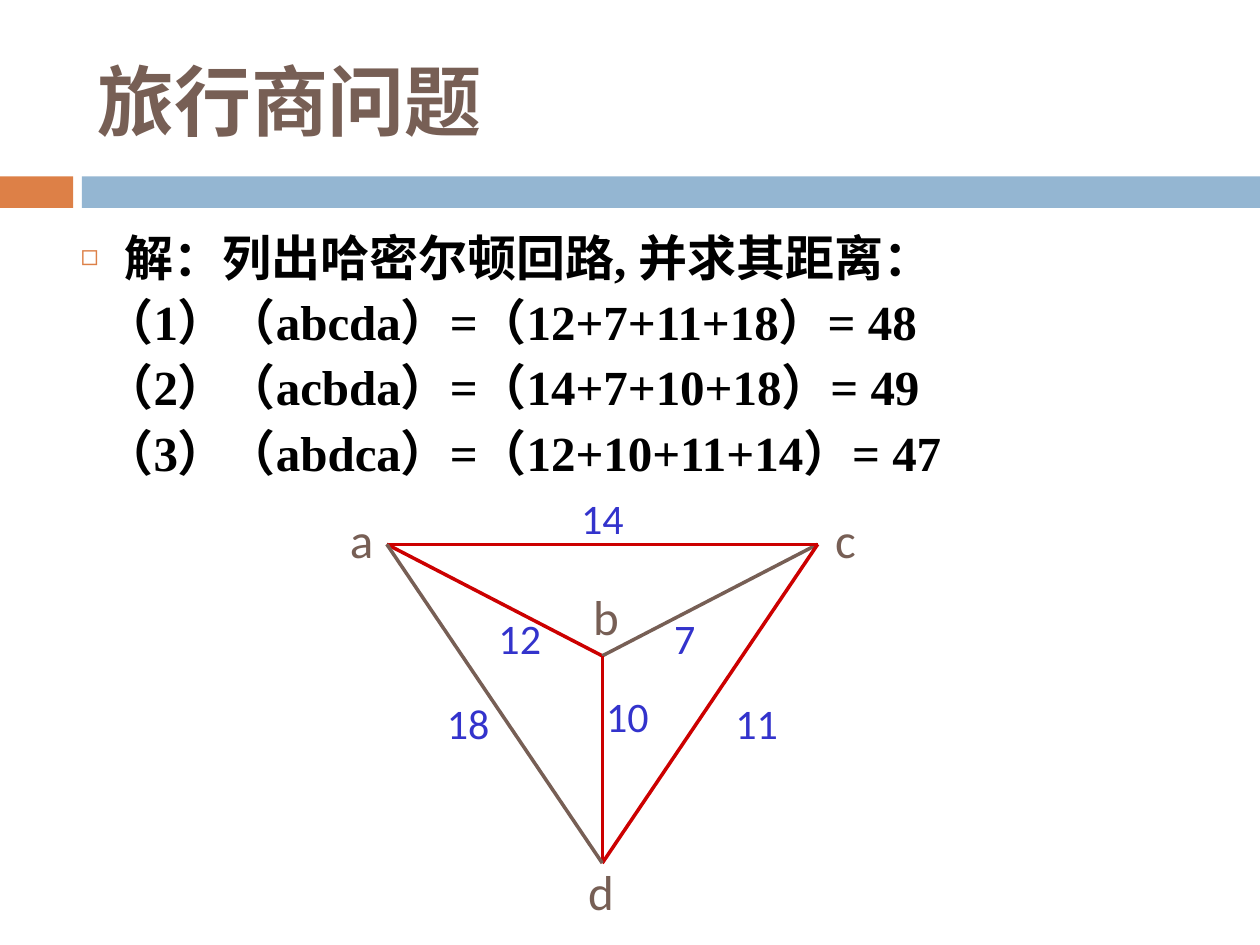
import pptx
import pptx.dml.color
import pptx.enum.lang
import pptx.enum.shapes
import pptx.enum.text
import pptx.oxml
import pptx.oxml.ns
import pptx.util

Inches, Pt = pptx.util.Inches, pptx.util.Pt
RGBColor = pptx.dml.color.RGBColor
Align, Anchor = pptx.enum.text.PP_ALIGN, pptx.enum.text.MSO_ANCHOR
Shape = pptx.enum.shapes.MSO_SHAPE

ORANGE = RGBColor(0xDD, 0x80, 0x47)
BLUE = RGBColor(0x94, 0xB6, 0xD2)
BROWN = RGBColor(0x77, 0x5F, 0x55)
RED = RGBColor(0xCC, 0x00, 0x00)
INDIGO = RGBColor(0x33, 0x33, 0xCC)
BLACK = RGBColor(0x00, 0x00, 0x00)

CHINESE = pptx.enum.lang.MSO_LANGUAGE_ID.SIMPLIFIED_CHINESE
TITLE_FONT = {"name": "Calibri", "size": Pt(44), "bold": True, "language_id": CHINESE}
BODY_FONT = {"name": "Times New Roman", "size": Pt(28), "bold": True, "language_id": CHINESE}
NODE_FONT = {"name": "Calibri", "size": Pt(28)}
WEIGHT_FONT = {"name": "Calibri", "size": Pt(24)}

HEADING = "解：列出哈密尔顿回路, 并求其距离："
ROUTES = [
    "（1）（abcda）=（12+7+11+18）= 48",
    "（2）（acbda）=（14+7+10+18）= 49",
    "（3）（abdca）=（12+10+11+14）= 47",
]

# Node: share of the graph box, then label offset in inches
NODES = {
    "a": ((0, 0), (-0.2, -0.04)),
    "b": ((0.5, 0.35), (0.03, -0.32)),
    "c": ((1, 0), (0.22, -0.04)),
    "d": ((0.5, 1), (-0.01, 0.22)),
}
# Edge: weight, then offset of the weight from the middle of the edge
EDGES = {
    "ab": ("12", (0.2, 0.3)),
    "bc": ("7", (-0.2, 0.3)),
    "db": ("10", (0.2, -0.35)),
    "ac": ("14", (0, -0.21)),
    "dc": ("11", (0.37, 0.15)),
    "da": ("18", (-0.21, 0.15)),
}
SHORTEST = {"ab", "db", "dc", "ac"}


def set_format(target, values):
    for name, value in values.items():
        setattr(target, name, value)


def add_span(para, text, font, color):
    span = para.add_run()
    span.text = text
    set_format(span.font, font)
    span.font.color.rgb = color


def place(shape, box):
    sides = ("left", "top", "width", "height")
    set_format(shape, {side: Inches(value) for side, value in zip(sides, box)})


def set_indent(para, margin, first, bullet=""):
    """Indent a paragraph in inches; bullet holds the bullet's XML elements."""
    props = para._p.get_or_add_pPr()
    props.set("marL", str(Inches(margin)))
    props.set("indent", str(Inches(first)))
    namespace = pptx.oxml.ns.nsdecls("a")
    for child in pptx.oxml.parse_xml(f"<a:list {namespace}>{bullet or '<a:buNone/>'}</a:list>"):
        props.append(child)


def add_title(page, box):
    title = page.shapes.title
    place(title, box)
    frame = title.text_frame
    set_format(frame, {"vertical_anchor": Anchor.MIDDLE,
                       "auto_size": pptx.enum.text.MSO_AUTO_SIZE.NONE})
    para = frame.paragraphs[0]
    para.alignment = Align.LEFT
    add_span(para, "旅行商问题", TITLE_FONT, BROWN)


def add_band(page, box):
    left, top, width, height = box
    for start, end, color in ((0, 0.058, ORANGE), (0.065, 1, BLUE)):
        bar = page.shapes.add_shape(Shape.RECTANGLE, 0, 0, 0, 0)
        place(bar, (left + start * width, top, (end - start) * width, height))
        bar.shadow.inherit = False
        bar.fill.solid()
        bar.fill.fore_color.rgb = color
        bar.line.fill.background()


def add_routes(page, box):
    body = page.placeholders[1]
    place(body, box)
    frame = body.text_frame
    set_format(frame, {"vertical_anchor": Anchor.TOP, "word_wrap": True,
                       "auto_size": pptx.enum.text.MSO_AUTO_SIZE.NONE})
    bullet = (f'<a:buClr><a:srgbClr val="{ORANGE}"/></a:buClr>'
              '<a:buSzPct val="60000"/><a:buChar char="◻"/>')
    for index, text in enumerate([HEADING] + ROUTES):
        para = frame.add_paragraph() if index else frame.paragraphs[0]
        set_format(para, {"space_before": Pt(7),
                          "line_spacing": 0.9 if index else 1.2,
                          "alignment": Align.JUSTIFY if index else Align.LEFT})
        if index:
            set_indent(para, 0.19, 0)
        else:
            set_indent(para, 0.35, -0.35, bullet)
        add_span(para, text, BODY_FONT, BLACK)


def add_label(group, text, center, size, font, color):
    width, height = size
    label = group.shapes.add_shape(Shape.RECTANGULAR_CALLOUT, 0, 0, 0, 0)
    place(label, (center[0] - width / 2, center[1] - height / 2, width, height))
    label.shadow.inherit = False
    label.fill.background()
    label.line.fill.background()
    label.text_frame.vertical_anchor = Anchor.MIDDLE
    para = label.text_frame.paragraphs[0]
    para.alignment = Align.CENTER
    add_span(para, text, font, color)


def add_edge(group, start, end, color):
    edge = group.shapes.add_connector(
        pptx.enum.shapes.MSO_CONNECTOR.STRAIGHT, *map(Inches, start + end))
    edge.line.color.rgb = color
    edge.line.width = Pt(2)
    properties = edge._element.spPr
    properties.append(properties.makeelement(pptx.oxml.ns.qn("a:effectLst"), {}))


def add_graph(page, box):
    """Draw the weighted graph, with its nodes at shares of the box."""
    left, top, width, height = box
    group = page.shapes.add_group_shape()
    points = {name: (left + x * width, top + y * height)
              for name, ((x, y), _) in NODES.items()}
    for pair in EDGES:
        add_edge(group, points[pair[0]], points[pair[1]], RED if pair in SHORTEST else BROWN)
    for pair, (weight, (dx, dy)) in EDGES.items():
        (x1, y1), (x2, y2) = points[pair[0]], points[pair[1]]
        center = ((x1 + x2) / 2 + dx, (y1 + y2) / 2 + dy)
        add_label(group, weight, center, (0.65, 0.45), WEIGHT_FONT, INDIGO)
    for name, (_, (dx, dy)) in NODES.items():
        x, y = points[name]
        add_label(group, name, (x + dx, y + dy), (0.57, 0.45), NODE_FONT, BROWN)


def main():
    deck = pptx.Presentation()
    set_format(deck, {"slide_width": Inches(10), "slide_height": Inches(7.5)})
    page = deck.slides.add_slide(deck.slide_layouts[1])
    add_band(page, (0, 1.4, 10, 0.25))
    add_title(page, (0.67, 0.25, 8.92, 1.08))
    add_routes(page, (0.54, 1.66, 9.5, 2.25))
    add_graph(page, (3.07, 4.32, 3.42, 2.53))
    deck.save("out.pptx")


if __name__ == "__main__":
    main()
